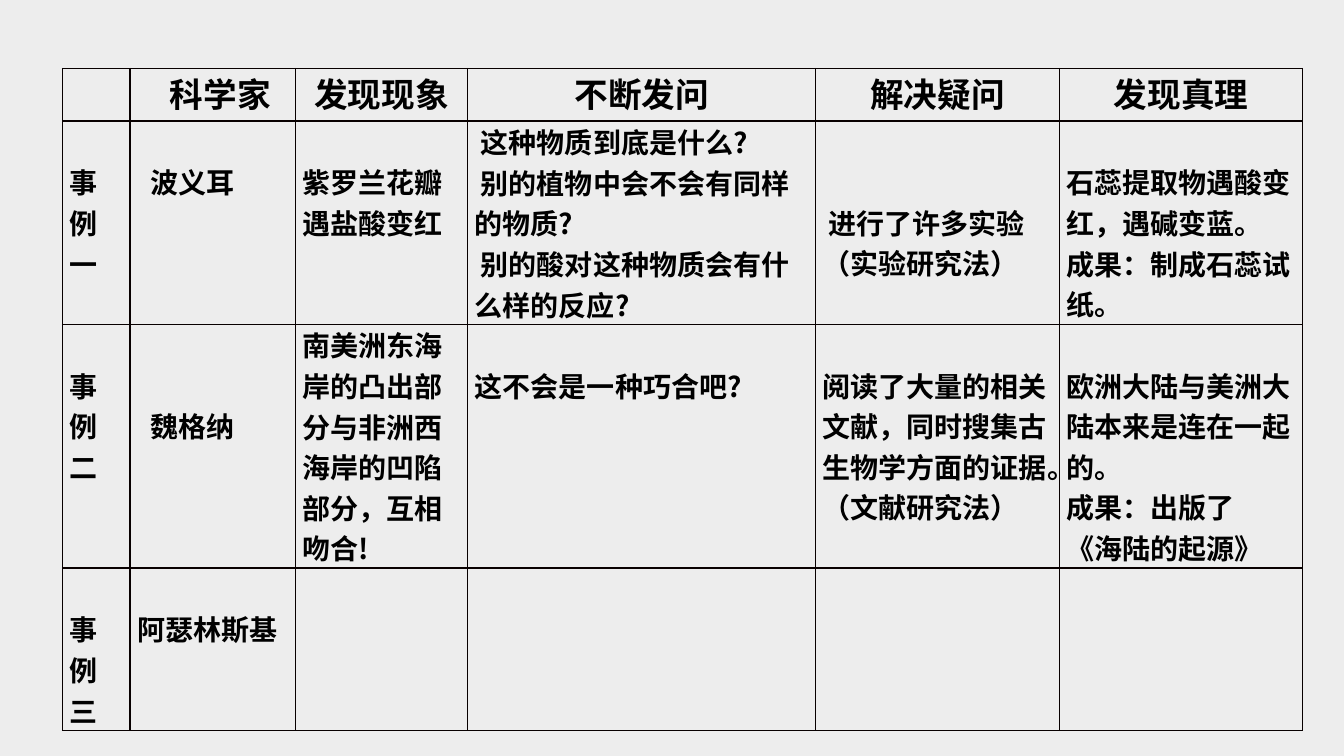
from lxml import etree
from pptx import Presentation
from pptx.dml.color import RGBColor
from pptx.enum.text import PP_ALIGN
from pptx.oxml.ns import qn
from pptx.util import Pt

PX = 9144
FONT = "Noto Sans CJK SC"
BLACK = RGBColor(0x00, 0x00, 0x00)
GREY = RGBColor(0xED, 0xED, 0xED)
BORDER = RGBColor(0x08, 0x00, 0x00)
LINE = 40
COLS = [67, 164, 171, 345, 242, 241]
ROWS = [52, 177, 213, 155]
EMPTY = (0, 0, [])

CELLS = [
    [
        EMPTY,
        (0, 15, ["科学家"]),
        (0, 0, ["发现现象"]),
        (0, 0, ["不断发问"]),
        (0, 0, ["解决疑问"]),
        (0, 0, ["发现真理"]),
    ],
    [
        (1, 0, ["事例一"]),
        (1, 13, ["波义耳"]),
        (1, 0, ["紫罗兰花瓣遇盐酸变红"]),
        (0, 6, ["这种物质到底是什么?", "别的植物中会不会有同样的物质?",
                "别的酸对这种物质会有什么样的反应?"]),
        (2, 6, ["进行了许多实验（实验研究法）"]),
        (1, 0, ["石蕊提取物遇酸变红，遇碱变蓝。", "成果：制成石蕊试纸。"]),
    ],
    [
        (1, 0, ["事例二"]),
        (2, 13, ["魏格纳"]),
        (0, 0, ["南美洲东海岸的凸出部分与非洲西海岸的凹陷部分，互相吻合!"]),
        (1, 0, ["这不会是一种巧合吧?"]),
        (1, 0, ["阅读了大量的相关文献，同时搜集古生物学方面的证据。（文献研究法）"]),
        (1, 0, ["欧洲大陆与美洲大陆本来是连在一起的。", "成果：出版了", "《海陆的起源》"]),
    ],
    [(1, 0, ["事例三"]), (1, 0, ["阿瑟林斯基"]), EMPTY, EMPTY, EMPTY, EMPTY],
]


def add_borders(cell):
    tcPr = cell._tc.get_or_add_tcPr()
    for i, side in enumerate(("lnL", "lnR", "lnT", "lnB")):
        ln = etree.Element(qn(f"a:{side}"), w=str(Pt(1)))
        fill = etree.SubElement(ln, qn("a:solidFill"))
        etree.SubElement(fill, qn("a:srgbClr"), val=str(BORDER))
        tcPr.insert(i, ln)


prs = Presentation()
prs.slide_width = 1333 * PX
prs.slide_height = 750 * PX
s = prs.slides.add_slide(prs.slide_layouts[6])
s.background.fill.solid()
s.background.fill.fore_color.rgb = GREY

table = s.shapes.add_table(len(ROWS), len(COLS), 62 * PX, 68 * PX,
                           sum(COLS) * PX, sum(ROWS) * PX).table
table.first_row = False
table.horz_banding = False
for col, width in zip(table.columns, COLS):
    col.width = width * PX
for row, height in zip(table.rows, ROWS):
    row.height = height * PX

for r_no, row in enumerate(CELLS):
    for c_no, (lines_down, indent, texts) in enumerate(row):
        cell = table.cell(r_no, c_no)
        cell.fill.background()
        add_borders(cell)
        cell.margin_left = cell.margin_right = 7 * PX
        cell.margin_top = lines_down * LINE * PX
        cell.margin_bottom = 0
        tf = cell.text_frame
        for i, text in enumerate(texts):
            p = tf.add_paragraph() if i else tf.paragraphs[0]
            p.alignment = PP_ALIGN.LEFT if r_no else PP_ALIGN.CENTER
            if indent:
                pPr = p._p.get_or_add_pPr()
                pPr.set("marL", "0")
                pPr.set("indent", str(indent * PX))
            r = p.add_run()
            r.text = text
            r.font.size = Pt(20 if r_no else 24)
            r.font.bold = True
            r.font.name = FONT
            r.font.color.rgb = BLACK
            etree.SubElement(r.font._element, qn("a:ea"), typeface=FONT)

prs.save("out.pptx")
